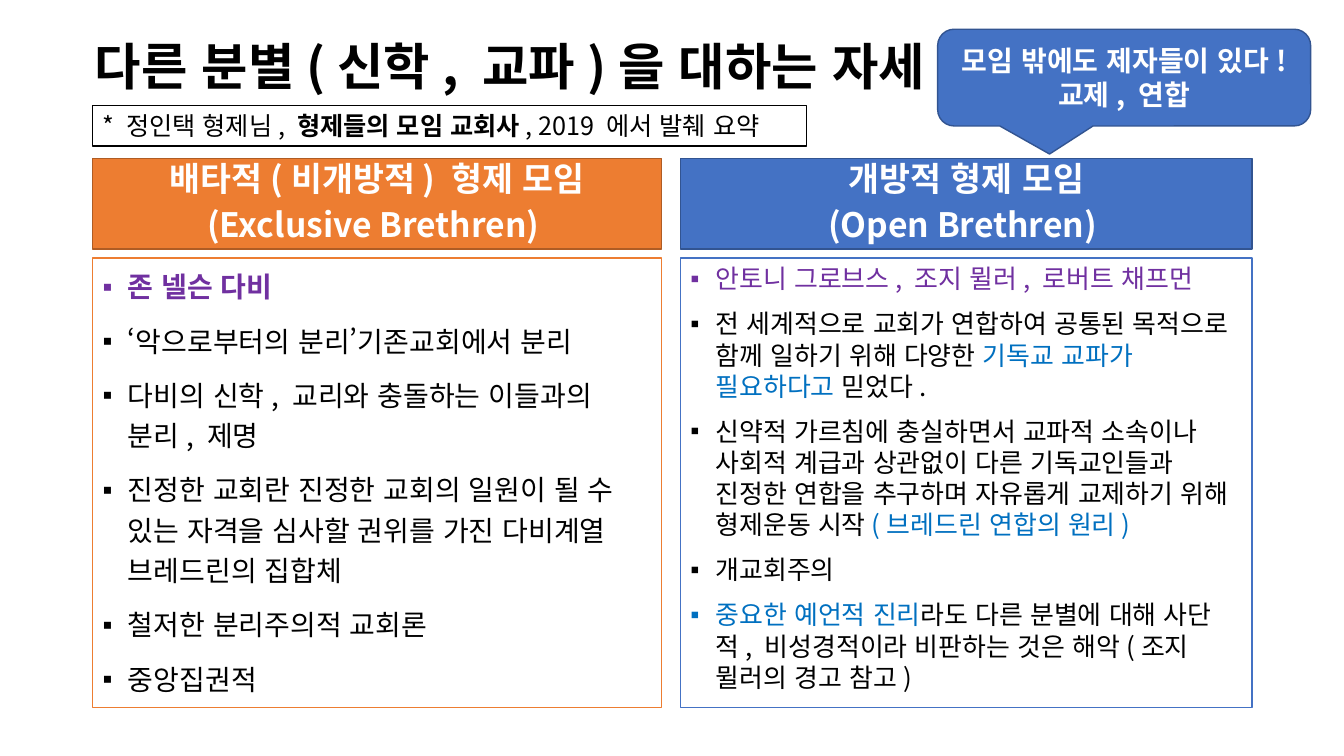
from dataclasses import dataclass

from lxml import etree
from pptx import Presentation
from pptx.dml.color import RGBColor
from pptx.enum.lang import MSO_LANGUAGE_ID
from pptx.enum.shapes import MSO_SHAPE
from pptx.enum.text import MSO_ANCHOR, MSO_AUTO_SIZE, PP_ALIGN
from pptx.oxml.ns import qn
from pptx.util import Emu, Pt

RECTANGLE = MSO_SHAPE.RECTANGLE
CALLOUT = MSO_SHAPE.ROUNDED_RECTANGULAR_CALLOUT
TOP, MIDDLE, BOTTOM = MSO_ANCHOR.TOP, MSO_ANCHOR.MIDDLE, MSO_ANCHOR.BOTTOM
LEFT, CENTER = PP_ALIGN.LEFT, PP_ALIGN.CENTER
NO_AUTOFIT = MSO_AUTO_SIZE.NONE
KOREAN = MSO_LANGUAGE_ID.KOREAN
TITLE_ONLY = 5
EMU_PER_PX = 9144  # 100 px to the inch


@dataclass(frozen=True)
class Theme:
    font: str = "Noto Sans CJK KR"
    bullet_font: str = "Arial"
    black: str = "000000"
    white: str = "FFFFFF"
    orange: str = "ED7D31"
    orange_edge: str = "AF5C24"
    blue: str = "4472C4"
    blue_edge: str = "325491"
    purple: str = "7030A0"
    accent: str = "0070C0"
    title_size: float = 36
    heading_size: float = 24
    callout_size: float = 20
    note_size: float = 18
    exclusive_size: float = 20
    open_size: float = 18.5


THEME = Theme()

# Each paragraph is a list of (text, format changes) spans.
PURPLE, ACCENT = {"color": THEME.purple}, {"color": THEME.accent}
EXCLUSIVE = {
    "box": (92, 157, 564, 545),
    "fill": THEME.orange,
    "edge": THEME.orange_edge,
    "heading": ["배타적(비개방적) 형제 모임", "(Exclusive Brethren) "],
    "size": THEME.exclusive_size,
    "line_spacing": 1.2,
    "points": [
        [("존 넬슨 다비", {"color": THEME.purple, "bold": True})],
        [("‘악으로부터의 분리’기존교회에서 분리", {})],
        [("다비의 신학, 교리와 충돌하는 이들과의 분리, 제명", {})],
        [("진정한 교회란 진정한 교회의 일원이 될 수 있는 자격을 심사할 "
          "권위를 가진 다비계열 브레드린의 집합체", {})],
        [("철저한 분리주의적 교회론", {})],
        [("중앙집권적", {})],
    ],
}
OPEN = {
    "box": (675, 157, 567, 545),
    "fill": THEME.blue,
    "edge": THEME.blue_edge,
    "heading": ["개방적 형제 모임", "(Open Brethren) "],
    "size": THEME.open_size,
    "line_spacing": 1.0,
    "points": [
        [("안토니 그로브스, 조지 뮐러, 로버트 채프먼", PURPLE)],
        [("전 세계적으로 교회가 연합하여 공통된 목적으로 함께 일하기 위해 다양한 ", {}),
         ("기독교 교파가 필요하다고 ", ACCENT), ("믿었다.", {})],
        [("신약적 가르침에 충실하면서 교파적 소속이나 사회적 계급과 상관없이 "
          "다른 기독교인들과 진정한 연합을 추구하며 자유롭게 교제하기 위해 형제운동 시작", {}),
         ("(브레드린 연합의 원리)", ACCENT)],
        [("개교회주의", {})],
        [("중요한 예언적 진리", ACCENT),
         ("라도 다른 분별에 대해 사단적, 비성경적이라 비판하는 것은 "
          "해악(조지 뮐러의 경고 참고)", {})],
    ],
}


def px(length):
    return Emu(round(length * EMU_PER_PX))


def rgb(color):
    return RGBColor.from_string(color)


def place(shape, box):
    for name, length in zip(("left", "top", "width", "height"), box):
        setattr(shape, name, px(length))


def add_span(para, text, size, color=THEME.black, bold=False):
    span = para.add_run()
    span.text = text
    values = {"name": THEME.font, "size": Pt(size), "bold": bold, "language_id": KOREAN}
    for name, value in values.items():
        setattr(span.font, name, value)
    span.font.color.rgb = rgb(color)
    east_asian = etree.SubElement(span.font._element, qn("a:ea"))
    east_asian.set("typeface", THEME.font)


def add_bullet(para):
    properties = para._p.get_or_add_pPr()
    properties.set("marL", str(px(25)))
    properties.set("indent", str(px(-25)))
    font = etree.SubElement(properties, qn("a:buFont"))
    font.set("typeface", THEME.bullet_font)
    bullet = etree.SubElement(properties, qn("a:buChar"))
    bullet.set("char", "▪")


def write(shape, paragraphs, base, anchor=TOP, bullets=False, **para_format):
    """Fill a shape with paragraphs; each span overrides the base format."""
    frame = shape.text_frame
    frame_format = {"word_wrap": True, "auto_size": NO_AUTOFIT, "vertical_anchor": anchor}
    for name, value in frame_format.items():
        setattr(frame, name, value)
    for index, spans in enumerate(paragraphs):
        para = frame.add_paragraph() if index else frame.paragraphs[0]
        for name, value in para_format.items():
            setattr(para, name, value)
        if bullets:
            add_bullet(para)
        for text, changes in spans:
            add_span(para, text, **{**base, **changes})


def add_panel(page, kind, box, fill, edge):
    panel = page.shapes.add_shape(kind, *map(px, box))
    panel.shadow.inherit = False
    panel.fill.solid()
    panel.fill.fore_color.rgb = rgb(fill)
    panel.line.color.rgb = rgb(edge)
    panel.line.width = Pt(1)
    return panel


def add_title(page, box):
    title = page.shapes.title
    place(title, box)
    write(title, [[("다른 분별(신학, 교파)을 대하는 자세", {})]],
          {"size": THEME.title_size, "bold": True},
          anchor=MIDDLE, alignment=LEFT, line_spacing=0.9)


def add_source_note(page, box):
    note = add_panel(page, RECTANGLE, box, THEME.white, THEME.black)
    write(note, [[("* 정인택 형제님, ", {}), ("형제들의 모임 교회사", {"bold": True}),
                  (", 2019 에서 발췌 요약", {})]],
          {"size": THEME.note_size}, alignment=LEFT)


def add_callout(page, box):
    callout = add_panel(page, CALLOUT, box, THEME.blue, THEME.blue_edge)
    for index, value in enumerate((-0.2, 0.79, 0.17)):
        callout.adjustments[index] = value
    write(callout, [[("모임 밖에도 제자들이 있다!", {})], [("교제, 연합", {})]],
          {"size": THEME.callout_size, "color": THEME.white, "bold": True},
          anchor=MIDDLE, alignment=CENTER)


def add_column(page, column):
    left, top, width, height = column["box"]
    heading_height, gap = 90, 9
    heading = add_panel(page, RECTANGLE, (left, top, width, heading_height),
                        column["fill"], column["edge"])
    write(heading, [[(line, {})] for line in column["heading"]],
          {"size": THEME.heading_size, "color": THEME.white, "bold": True},
          anchor=BOTTOM, alignment=CENTER, line_spacing=0.8, space_before=Pt(10))
    offset = heading_height + gap
    body = add_panel(page, RECTANGLE, (left, top + offset, width, height - offset),
                     THEME.white, column["fill"])
    write(body, column["points"], {"size": column["size"]}, bullets=True, alignment=LEFT,
          line_spacing=column["line_spacing"], space_before=Pt(10))


def main():
    deck = Presentation()
    deck.slide_width, deck.slide_height = px(1333), px(750)
    page = deck.slides.add_slide(deck.slide_layouts[TITLE_ONLY])
    add_title(page, (84, 34, 1150, 69))
    for column in (EXCLUSIVE, OPEN):
        add_column(page, column)
    add_source_note(page, (92, 105, 708, 40))
    add_callout(page, (930, 29, 370, 96))
    deck.save("out.pptx")


if __name__ == "__main__":
    main()
